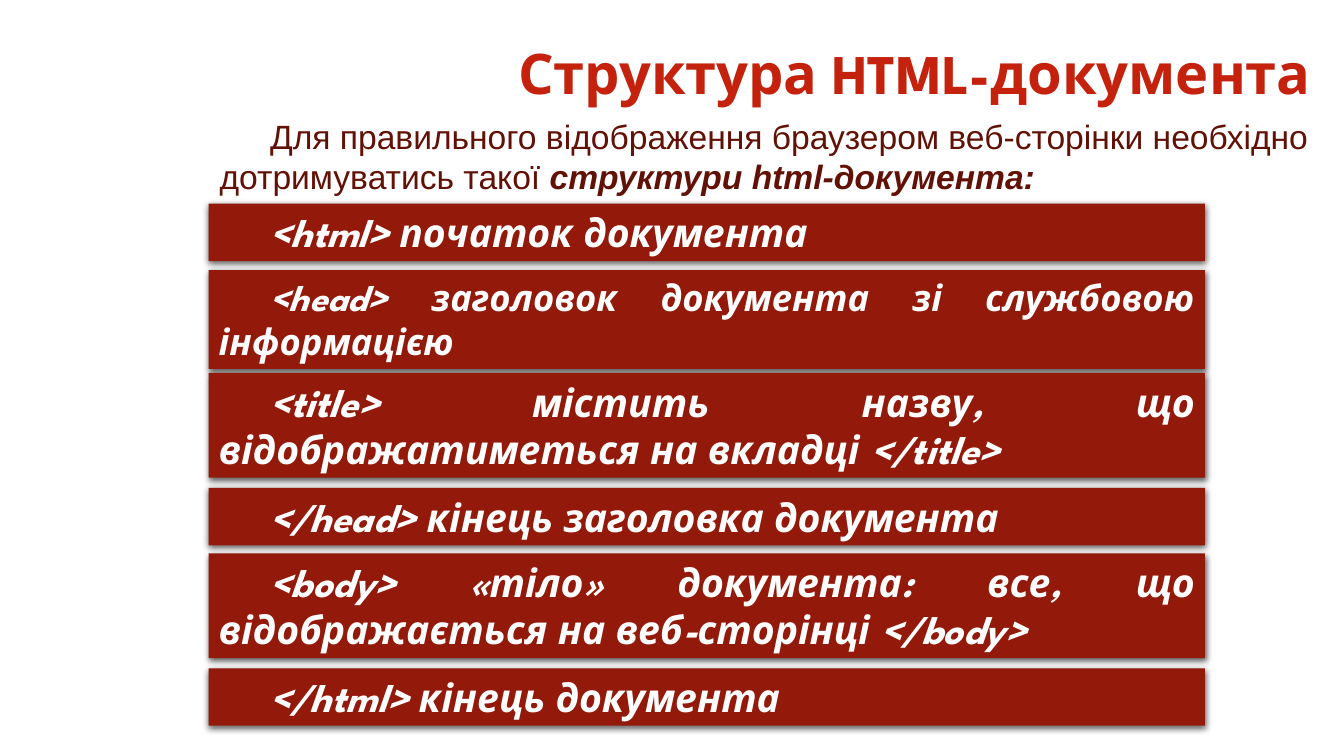
from lxml.etree import SubElement
from pptx import Presentation
from pptx.dml.color import RGBColor
from pptx.enum.shapes import MSO_SHAPE
from pptx.enum.text import MSO_ANCHOR, MSO_AUTO_SIZE, PP_ALIGN
from pptx.oxml.ns import qn
from pptx.util import Inches, Pt

TITLE = "Структура HTML-документа"
INTRO = [
    ("Для правильного відображення браузером веб-сторінки необхідно дотримуватись такої ", False),
    ("структури html-документа:", True),
]
BARS = [
    (2.02, 0.57, 28, "<html> початок документа"),
    (2.68, 0.98, 26, "<head> заголовок документа зі службовою інформацією"),
    (3.7, 1.04, 28, "<title> містить назву, що відображатиметься на вкладці </title>"),
    (4.84, 0.57, 28, "</head> кінець заголовка документа"),
    (5.49, 1.04, 28, "<body> «тіло» документа: все, що відображається на веб-сторінці </body>"),
    (6.63, 0.57, 28, "</html> кінець документа"),
]
BAR_LEFT, BAR_WIDTH = 2.07, 9.88
HEAD_FONT, BODY_FONT = "League Spartan", "Arial"
RED, MAROON, BRICK, WHITE = "C4220D", "621107", "93190A", "FFFFFF"


def rgb(value):
    return RGBColor.from_string(value)


def write(sp, runs, size, font, color, align, indent=0):
    tf = sp.text_frame
    tf.word_wrap = True
    tf.auto_size = MSO_AUTO_SIZE.SHAPE_TO_FIT_TEXT
    p = tf.paragraphs[0]
    p.alignment = align
    if indent:
        p._p.get_or_add_pPr().set("indent", str(Inches(indent)))
    for text, bold, italic in runs:
        r = p.add_run()
        r.text = text
        r.font.size = Pt(size)
        r.font.name = font
        r.font.bold = bold
        r.font.italic = italic
        r.font.color.rgb = rgb(color)


def add_shadow(sp):
    sp.shadow.inherit = False
    effects = sp._element.spPr.find(qn("a:effectLst"))
    outer = SubElement(effects, qn("a:outerShdw"), blurRad=str(Pt(4.5)),
                       dist=str(Pt(1.5)), dir="5400000", rotWithShape="0")
    color = SubElement(outer, qn("a:srgbClr"), val="000000")
    SubElement(color, qn("a:alpha"), val="63000")


def add_text(slide, left, top, width, height):
    return slide.shapes.add_textbox(Inches(left), Inches(top), Inches(width), Inches(height))


def add_bar(slide, top, height, size, text):
    sp = slide.shapes.add_shape(MSO_SHAPE.RECTANGLE, Inches(BAR_LEFT), Inches(top),
                                Inches(BAR_WIDTH), Inches(height))
    sp.fill.solid()
    sp.fill.fore_color.rgb = rgb(BRICK)
    sp.line.fill.background()
    add_shadow(sp)
    sp.text_frame.vertical_anchor = MSO_ANCHOR.TOP
    write(sp, [(text, True, True)], size, HEAD_FONT, WHITE, PP_ALIGN.JUSTIFY, 0.5)


def main():
    prs = Presentation()
    prs.slide_width, prs.slide_height = Inches(13.33), Inches(7.5)
    slide = prs.slides.add_slide(prs.slide_layouts[6])
    title = add_text(slide, 4.13, 0.33, 9.88, 0.77)
    write(title, [(TITLE, True, False)], 40, HEAD_FONT, RED, PP_ALIGN.CENTER)
    intro = add_text(slide, 2.08, 1.1, 11.44, 0.91)
    write(intro, [(text, strong, strong) for text, strong in INTRO],
          24, BODY_FONT, MAROON, PP_ALIGN.LEFT, 0.5)
    for bar in BARS:
        add_bar(slide, *bar)
    prs.save("out.pptx")


if __name__ == "__main__":
    main()
